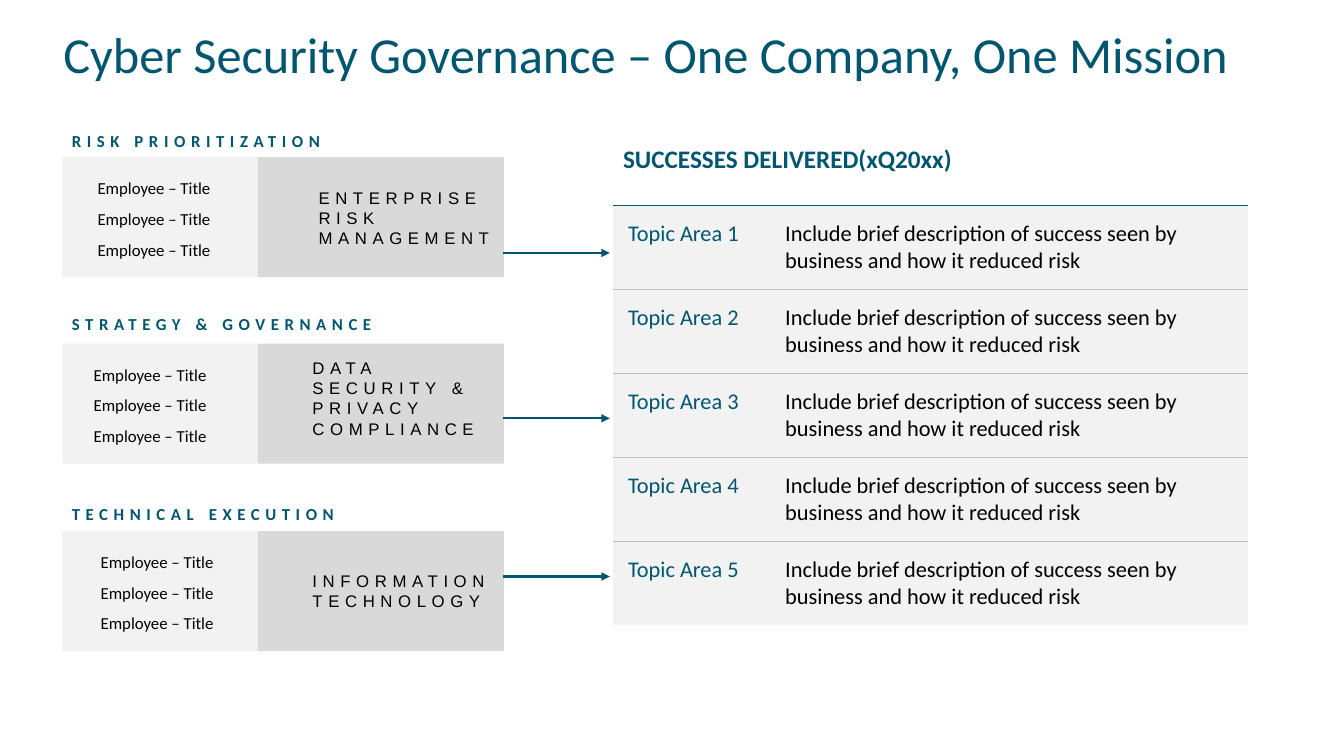
"""Build the cyber security governance slide."""
from lxml import etree
from pptx import Presentation
from pptx.dml.color import RGBColor
from pptx.enum.shapes import MSO_CONNECTOR as Connector, MSO_SHAPE as Shape
from pptx.enum.text import MSO_ANCHOR as Anchor, MSO_AUTO_SIZE as AutoSize, PP_ALIGN as Align
from pptx.oxml import parse_xml
from pptx.oxml.ns import nsdecls, qn
from pptx.util import Pt

TEAL = RGBColor(0x00, 0x56, 0x6E)
BLACK = RGBColor(0x00, 0x00, 0x00)
LIGHT = RGBColor(0xF2, 0xF2, 0xF2)
MEDIUM = RGBColor(0xD9, 0xD9, 0xD9)
RULE = RGBColor(0xBF, 0xBF, 0xBF)

SECTIONS = [
    ("RISK PRIORITIZATION", 90, 112.3, 62.6,
     "ENTERPRISE RISK MANAGEMENT", 227.5, 133.9, 180.7),
    ("STRATEGY & GOVERNANCE", 220.3, 245.5, 59.8,
     "DATA SECURITY & PRIVACY COMPLIANCE", 223.2, 255.6, 298.8),
    ("TECHNICAL EXECUTION", 356.4, 379.4, 64.8,
     "INFORMATION\vTECHNOLOGY", 223.2, 407.5, 411.8),
]
BAND_HEIGHT = 85.7
TOPICS = 5


def style(paragraph, size, color, name="Calibri", bold=False, spacing=0):
    font = paragraph.font
    font.size, font.name, font.bold = Pt(size), name, bold
    font.color.rgb = color
    if spacing:
        for run in paragraph.runs:
            run.font._element.set("spc", str(spacing * 100))


def add_text(left, top, width, height, lines, inset=True, **look):
    box = slide.shapes.add_textbox(Pt(left), Pt(top), Pt(width), Pt(height))
    frame = box.text_frame
    frame.word_wrap = True
    if not inset:
        frame.margin_left = frame.margin_right = frame.margin_top = frame.margin_bottom = 0
    frame.text = "\n".join(lines)
    for paragraph in frame.paragraphs:
        style(paragraph, 12, **look)
    return frame


presentation = Presentation()
presentation.slide_width, presentation.slide_height = Pt(960), Pt(540)
slide = presentation.slides.add_slide(presentation.slide_layouts[5])

title = slide.shapes.title
title.left, title.top, title.width, title.height = Pt(38), Pt(19.4), Pt(921.6), Pt(63.4)
title.text_frame.text = "Cyber Security Governance – One Company, One Mission"
title.text_frame.auto_size = AutoSize.NONE
title.text_frame.vertical_anchor = Anchor.TOP
heading = title.text_frame.paragraphs[0]
heading.alignment, heading.line_spacing = Align.LEFT, 0.85
style(heading, 36, TEAL)

for label, label_top, band_top, staff_left, team, team_left, team_top, arrow_y in SECTIONS:
    for left, width, color in ((44.6, 139.7, LIGHT), (184.3, 175.7, MEDIUM)):
        band = slide.shapes.add_shape(
            Shape.RECTANGLE, Pt(left), Pt(band_top), Pt(width), Pt(BAND_HEIGHT))
        band.shadow.inherit = False
        band.fill.solid()
        band.fill.fore_color.rgb = color
        band.line.fill.background()

    add_text(44.2, label_top, 347, 21.8, [label], color=TEAL, bold=True, spacing=4)
    staff = add_text(staff_left, band_top + 10, 238, 66, ["Employee – Title"] * 3, color=BLACK)
    for paragraph in staff.paragraphs:
        paragraph.line_spacing, paragraph.space_before = 1.1, Pt(6)
    add_text(team_left, team_top, 131, 60, [team], inset=False,
             color=BLACK, name="Arial", spacing=4)

    arrow = slide.shapes.add_connector(
        Connector.STRAIGHT, Pt(359.5), Pt(arrow_y), Pt(435.6), Pt(arrow_y))
    arrow.line.color.rgb, arrow.line.width = TEAL, Pt(1.5)
    etree.SubElement(arrow.line._get_or_add_ln(), qn("a:tailEnd"), type="triangle")
    etree.SubElement(arrow._element.spPr, qn("a:effectLst"))

table = slide.shapes.add_table(
    TOPICS + 1, 2, Pt(437.8), Pt(81.4), Pt(453.6), Pt(365)).table
table.first_row = table.horz_banding = False
table.columns[0].width, table.columns[1].width = Pt(112.3), Pt(341.3)
table.cell(0, 0).merge(table.cell(0, 1))
table.cell(0, 0).text = "SUCCESSES DELIVERED(xQ20xx)"

for number, row in enumerate(table.rows):
    row.height = Pt(60 if number else 65)
    above = {0: None, 1: TEAL}.get(number, RULE)
    below = {0: TEAL, TOPICS: None}.get(number, RULE)
    for column, cell in enumerate(row.cells):
        if number:
            cell.text = ("Include brief description of success seen by business "
                         "and how it reduced risk" if column else f"Topic Area {number}")
            cell.margin_left = cell.margin_right = Pt(10.8)
            cell.margin_top = cell.margin_bottom = Pt(10.8)
            cell.fill.solid()
            cell.fill.fore_color.rgb = LIGHT
            style(cell.text_frame.paragraphs[0], 16, BLACK if column else TEAL)
        else:
            cell.margin_top = cell.margin_bottom = Pt(21.6)
            cell.vertical_anchor = Anchor.BOTTOM
            cell.fill.background()
            style(cell.text_frame.paragraphs[0], 18, TEAL, bold=True)
        borders = (("lnL", None), ("lnR", None), ("lnT", above), ("lnB", below))
        for position, (side, color) in enumerate(borders):
            paint = (f'<a:solidFill><a:srgbClr val="{color}"/></a:solidFill>'
                     if color else "<a:noFill/>")
            cell._tc.get_or_add_tcPr().insert(position, parse_xml(
                f'<a:{side} {nsdecls("a")} w="{Pt(0.5)}">{paint}</a:{side}>'))

presentation.save("out.pptx")
